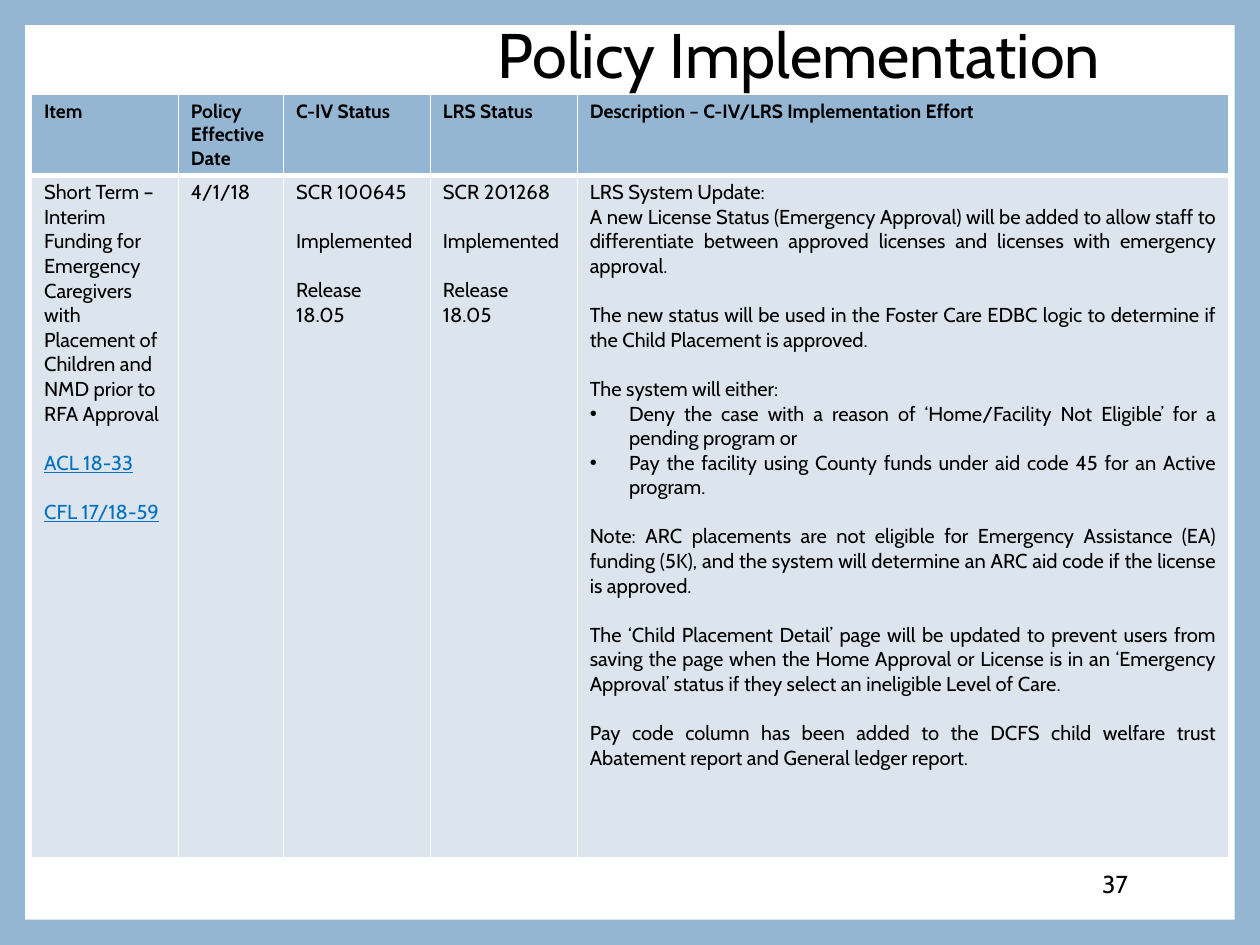
from lxml import etree
from pptx import Presentation
from pptx.dml.color import RGBColor
from pptx.enum.shapes import MSO_SHAPE
from pptx.enum.text import MSO_ANCHOR, MSO_AUTO_SIZE, PP_ALIGN
from pptx.oxml.ns import qn
from pptx.util import Cm, Pt

RECTANGLE = MSO_SHAPE.RECTANGLE
MIDDLE = MSO_ANCHOR.MIDDLE
NO_AUTOFIT = MSO_AUTO_SIZE.NONE
LEFT, RIGHT, JUSTIFY = PP_ALIGN.LEFT, PP_ALIGN.RIGHT, PP_ALIGN.JUSTIFY

TITLE_ONLY = 5
LINE_GAP = 14  # points, one text line

HEADERS = ["Item", "Policy Effective Date", "C-IV Status", "LRS Status",
           "Description – C-IV/LRS Implementation Effort"]
COLUMN_WIDTHS = [2.96, 2.12, 2.96, 2.96, 13.12]
ROW_HEIGHTS = [1.54, 13.75]

# Each paragraph is (text, marks): gap, link, justify, bullet
ITEM = [
    ("Short Term – Interim Funding for Emergency Caregivers with Placement of "
     "Children and NMD prior to RFA Approval", ""),
    ("ACL 18-33", "gap link"),
    ("CFL 17/18-59", "gap link"),
]
EFFECTIVE_DATE = [("4/1/18", "")]
CIV_STATUS = [("SCR 100645", ""), ("Implemented", "gap"),
              ("Release", "gap"), ("18.05", "")]
LRS_STATUS = [("SCR 201268", ""), ("Implemented", "gap"),
              ("Release \v18.05", "gap")]
DESCRIPTION = [
    ("LRS System Update:", ""),
    ("A new License Status (Emergency Approval) will be added to allow staff to "
     "differentiate between approved licenses and licenses with emergency "
     "approval.", "justify"),
    ("The new status will be used in the Foster Care EDBC logic to determine if "
     "the Child Placement is approved.", "justify gap"),
    ("The system will either:", "justify gap"),
    ("Deny the case with a reason of ‘Home/Facility Not Eligible’ for a pending "
     "program or", "justify bullet"),
    ("Pay the facility using County funds under aid code 45 for an Active "
     "program.", "justify bullet"),
    ("Note: ARC placements are not eligible for Emergency Assistance (EA) funding "
     "(5K), and the system will determine an ARC aid code if the license is "
     "approved.", "justify gap"),
    ("The ‘Child Placement Detail’ page will be updated to prevent users from "
     "saving the page when the Home Approval or License is in an ‘Emergency "
     "Approval’ status if they select an ineligible Level of Care.",
     "justify gap"),
    ("Pay code column has been added to the DCFS child welfare trust Abatement "
     "report and General ledger report.", "justify gap"),
]


def color(code):
    return RGBColor.from_string(code)


class SlideBuilder:
    font = "Cabin"
    ink, paper, link = "000000", "FFFFFF", "0070C0"
    accent, tint = "94B6D2", "DCE5EE"

    def __init__(self, page):
        self.page = page

    def background(self):
        fill = self.page.background.fill
        fill.solid()
        fill.fore_color.rgb = color(self.accent)

    def panel(self, left, top, width, height):
        box = self.page.shapes.add_shape(
            RECTANGLE, Cm(left), Cm(top), Cm(width), Cm(height))
        box.shadow.inherit = False
        box.fill.solid()
        box.fill.fore_color.rgb = color(self.paper)
        box.line.fill.background()

    def style(self, para, size, bold=False, ink=ink, align=LEFT):
        para.alignment = align
        para.font.name = self.font
        para.font.size = Pt(size)
        para.font.bold = bold
        para.font.color.rgb = color(ink)

    def line_of_text(self, box, text, size):
        frame = box.text_frame
        frame.word_wrap = True
        frame.auto_size = NO_AUTOFIT
        frame.vertical_anchor = MIDDLE
        frame.text = text
        para = frame.paragraphs[0]
        self.style(para, size, align=RIGHT)
        return para

    def title(self, text, left, top, width, height):
        box = self.page.shapes.title
        box.left, box.top = Cm(left), Cm(top)
        box.width, box.height = Cm(width), Cm(height)
        self.line_of_text(box, text, 36).line_spacing = 0.9

    def page_number(self, text, left, top, width, height):
        box = self.page.shapes.add_textbox(
            Cm(left), Cm(top), Cm(width), Cm(height))
        self.line_of_text(box, text, 14)

    def bullet(self, para):
        props = para._p.get_or_add_pPr()
        props.set("marL", str(Cm(0.79)))
        props.set("indent", str(-Cm(0.79)))
        etree.SubElement(props, qn("a:buFont")).set("typeface", "Arial")
        etree.SubElement(props, qn("a:buChar")).set("char", "•")

    def borders(self, cell, bottom):
        props = cell._tc.get_or_add_tcPr()
        for side, width in (("L", 1), ("R", 1), ("T", 1), ("B", bottom)):
            line = etree.SubElement(props, qn("a:ln" + side), w=str(Pt(width)))
            fill = etree.SubElement(line, qn("a:solidFill"))
            etree.SubElement(fill, qn("a:srgbClr"), val=self.paper)

    def cell(self, cell, paragraphs, fill, size, bold=False, bottom=1):
        self.borders(cell, bottom)
        cell.fill.solid()
        cell.fill.fore_color.rgb = color(fill)
        cell.margin_left = cell.margin_right = Cm(0.25)
        cell.margin_top = cell.margin_bottom = Cm(0.1)
        frame = cell.text_frame
        for index, (text, marks) in enumerate(paragraphs):
            para = frame.add_paragraph() if index else frame.paragraphs[0]
            para.text = text
            is_link = "link" in marks
            self.style(para, size, bold, self.link if is_link else self.ink,
                       JUSTIFY if "justify" in marks else LEFT)
            if is_link:
                para.font.underline = True
            if "gap" in marks:
                para.space_before = Pt(LINE_GAP)
            if "bullet" in marks:
                self.bullet(para)

    def table(self, left, top, headers, body):
        grid = self.page.shapes.add_table(
            2, len(headers), Cm(left), Cm(top),
            Cm(sum(COLUMN_WIDTHS)), Cm(sum(ROW_HEIGHTS))).table
        for column, width in zip(grid.columns, COLUMN_WIDTHS):
            column.width = Cm(width)
        for row, height in zip(grid.rows, ROW_HEIGHTS):
            row.height = Cm(height)
        for index, (header, paragraphs) in enumerate(zip(headers, body)):
            self.cell(grid.cell(0, index), [(header, "")], self.accent, 11,
                      bold=True, bottom=3)
            self.cell(grid.cell(1, index), paragraphs, self.tint, 11.5)


def main():
    deck = Presentation()
    deck.slide_width, deck.slide_height = Cm(25.4), Cm(19.05)
    page = deck.slides.add_slide(deck.slide_layouts[TITLE_ONLY])
    builder = SlideBuilder(page)

    # Frame: coloured background around a white panel
    builder.background()
    builder.panel(0.51, 0.51, 24.38, 18.03)
    # Bring the title in front of the panel
    page.shapes._spTree.append(page.shapes.title._element)

    # Content
    builder.title("Policy Implementation", 1.27, 0.43, 21.16, 1.47)
    builder.page_number("37", 19.43, 17.3, 3.56, 1.02)
    builder.table(0.64, 1.91, HEADERS,
                  [ITEM, EFFECTIVE_DATE, CIV_STATUS, LRS_STATUS, DESCRIPTION])

    deck.save("out.pptx")


if __name__ == "__main__":
    main()
